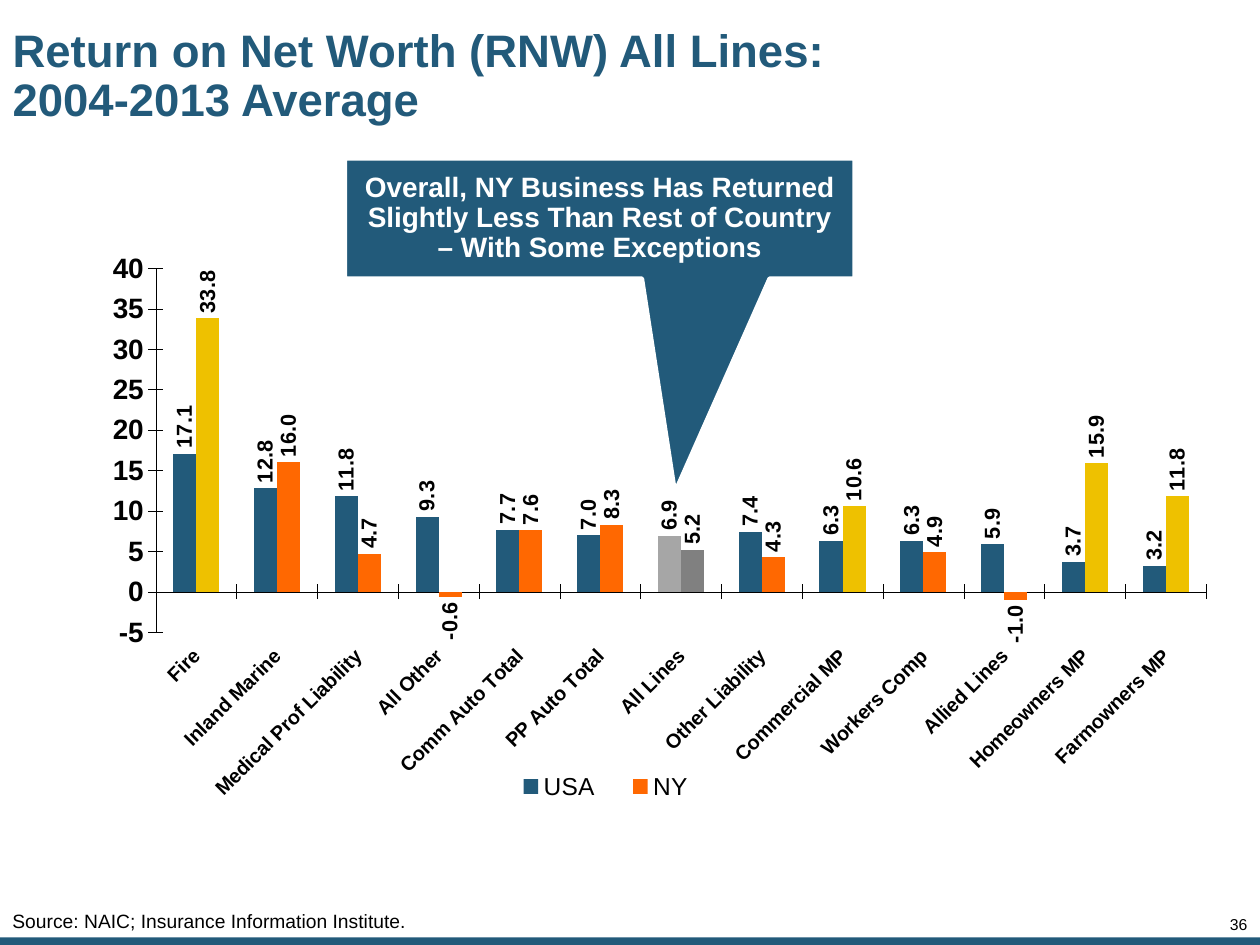
from lxml import etree
from pptx import Presentation
from pptx.chart import data as chart_data
from pptx.dml.color import RGBColor
from pptx.enum import chart as charts, shapes, text
from pptx.oxml import ns
from pptx.util import Pt

NAVY, ORANGE, GOLD, BLACK, WHITE = "225A7A", "FF6801", "EEC100", "000000", "FFFFFF"
RETURNS = [
    ("Fire", 17.1, 33.8),
    ("Inland Marine", 12.8, 16.0),
    ("Medical Prof Liability", 11.8, 4.7),
    ("All Other", 9.3, -0.6),
    ("Comm Auto Total", 7.7, 7.6),
    ("PP Auto Total", 7.0, 8.3),
    ("All Lines", 6.9, 5.2),
    ("Other Liability", 7.4, 4.3),
    ("Commercial MP", 6.3, 10.6),
    ("Workers Comp", 6.3, 4.9),
    ("Allied Lines", 5.9, -1.0),
    ("Homeowners MP", 3.7, 15.9),
    ("Farmowners MP", 3.2, 11.8),
]
SERIES_STYLES = [
    (NAVY, "0.0", {"All Lines": "A6A6A6"}),
    (ORANGE, "#,##0.0", {"All Lines": "808080", "Fire": GOLD, "Commercial MP": GOLD,
                         "Homeowners MP": GOLD, "Farmowners MP": GOLD}),
]


def color(value):
    """Turn a hex string into a colour."""
    return RGBColor.from_string(value)


def paint(fill, value):
    """Give a fill one solid colour."""
    fill.solid()
    fill.fore_color.rgb = color(value)


def set_layout(parent, index, inner, **fractions):
    """Place a chart part by fractions of the chart area."""
    for old in parent.findall(ns.qn("c:layout")):
        parent.remove(old)
    layout = etree.Element(ns.qn("c:layout"))
    manual = etree.SubElement(layout, ns.qn("c:manualLayout"))
    settings = {"layoutTarget": "inner"} if inner else {}
    settings.update(xMode="edge", yMode="edge", **fractions)
    for name, value in settings.items():
        etree.SubElement(manual, ns.qn("c:" + name)).set("val", str(value))
    parent.insert(index, layout)


class Deck:
    """Hold the style and the current slide."""

    font_name = "Arial"

    def __init__(self):
        """Start a presentation with one title-only slide."""
        self.presentation = Presentation()
        self.presentation.slide_width, self.presentation.slide_height = Pt(720), Pt(540)
        self.slide = self.presentation.slides.add_slide(self.presentation.slide_layouts[5])

    def style(self, font, size, value=BLACK, bold=False):
        """Format a font."""
        font.name, font.size, font.bold = self.font_name, Pt(size), bold
        font.color.rgb = color(value)

    def fill_text(self, shape, lines, size, value=BLACK, bold=False, align=text.PP_ALIGN.LEFT,
                  anchor=text.MSO_ANCHOR.TOP, spacing=1.0, insets=(7.2, 3.6)):
        """Put lines into one paragraph of a shape."""
        frame = shape.text_frame
        frame.word_wrap, frame.auto_size = True, text.MSO_AUTO_SIZE.NONE
        frame.vertical_anchor = anchor
        frame.margin_left = frame.margin_right = Pt(insets[0])
        frame.margin_top = frame.margin_bottom = Pt(insets[1])
        paragraph = frame.paragraphs[0]
        paragraph.alignment, paragraph.line_spacing = align, spacing
        for number, line in enumerate(lines):
            if number:
                paragraph.add_line_break()
            run = paragraph.add_run()
            run.text = line
            self.style(run.font, size, value, bold)

    def title(self, box, lines):
        """Move and fill the title placeholder."""
        shape = self.slide.shapes.title
        shape.left, shape.top, shape.width, shape.height = map(Pt, box)
        self.fill_text(shape, lines, 26, NAVY, True, anchor=text.MSO_ANCHOR.BOTTOM, spacing=0.9)

    def text_box(self, box, line, size, **options):
        """Add a line of plain text."""
        self.fill_text(self.slide.shapes.add_textbox(*map(Pt, box)), [line], size, **options)

    def shape(self, kind, box, line=None):
        """Add a navy preset shape."""
        shape = self.slide.shapes.add_shape(kind, *map(Pt, box))
        shape.shadow.inherit = False
        paint(shape.fill, NAVY)
        if line:
            paint(shape.line.fill, line)
            shape.line.width = Pt(2.25)
        else:
            shape.line.fill.background()
        return shape

    def callout(self, box, pointer, line):
        """Add a callout with its pointer tip."""
        shape = self.shape(shapes.MSO_SHAPE.RECTANGULAR_CALLOUT, box, WHITE)
        shape.adjustments[0], shape.adjustments[1] = pointer
        self.fill_text(shape, [line], 16, WHITE, True, text.PP_ALIGN.CENTER,
                       text.MSO_ANCHOR.MIDDLE, 0.9, (7.2, 7.2))

    def axis(self, axis, size):
        """Format an axis."""
        axis.has_major_gridlines = False
        axis.major_tick_mark = charts.XL_TICK_MARK.CROSS
        axis.minor_tick_mark = charts.XL_TICK_MARK.NONE
        self.style(axis.tick_labels.font, size, bold=True)
        paint(axis.format.line.fill, BLACK)
        axis.format.line.width = Pt(0.25)

    def column_chart(self, box):
        """Add the chart of returns by line."""
        names, usa, new_york = zip(*RETURNS)
        values = chart_data.CategoryChartData()
        values.categories = names
        values.add_series("USA", usa)
        values.add_series("NY", new_york)
        chart = self.slide.shapes.add_chart(
            charts.XL_CHART_TYPE.COLUMN_CLUSTERED, *map(Pt, box), values).chart
        self.style(chart.font, 10.4)
        chart.has_title = False
        self.axis(chart.category_axis, 11.4)
        chart.category_axis.tick_label_position = charts.XL_TICK_LABEL_POSITION.LOW
        self.axis(chart.value_axis, 16)
        chart.value_axis.minimum_scale, chart.value_axis.maximum_scale = -5, 40
        chart.value_axis.major_unit = 5
        chart.value_axis.tick_labels.number_format = "General"
        chart.value_axis.tick_labels.number_format_is_linked = False
        plot = chart.plots[0]
        plot.gap_width, plot.overlap, plot.vary_by_categories = 150, 0, False
        for series, (fill, number_format, highlights) in zip(plot.series, SERIES_STYLES):
            series.invert_if_negative = False
            paint(series.format.fill, fill)
            for name, highlight in highlights.items():
                paint(series.points[names.index(name)].format.fill, highlight)
            labels = series.data_labels
            labels.show_value = True
            labels.number_format, labels.number_format_is_linked = number_format, False
            labels.position = charts.XL_LABEL_POSITION.OUTSIDE_END
            self.style(labels.font, 12.4, bold=True)
        for parent, degrees in (("c:dLbls", -90), ("c:catAx", -45)):
            for body in chart.element.xpath(f".//{parent}/c:txPr/a:bodyPr"):
                body.set("rot", str(degrees * 60000))
                body.set("vert", "horz")
        chart.has_legend = True
        chart.legend.position = charts.XL_LEGEND_POSITION.RIGHT
        chart.legend.include_in_layout = False
        self.style(chart.legend.font, 14)
        set_layout(chart.element.xpath(".//c:plotArea")[0], 0, True,
                   x=0.119, y=0.077, w=0.843, h=0.571)
        set_layout(chart.element.xpath(".//c:legend")[0], 1, False,
                   x=0.39, y=0.86, w=0.18, h=0.06)


def main():
    """Build the slide and save it."""
    deck = Deck()
    deck.shape(shapes.MSO_SHAPE.RECTANGLE, (0, 535.7, 720, 4.3))
    deck.text_box((677.5, 524.2, 35.3, 9.4), "36", 9, align=text.PP_ALIGN.RIGHT,
                  spacing=0.85, insets=(0, 0))
    deck.title((0, 7.9, 684, 67.7), ["Return on Net Worth (RNW) All Lines:", "2004-2013 Average"])
    deck.column_chart((4.3, 125.3, 712.1, 364.3))
    deck.text_box((0, 502.6, 689, 33.8), "Source: NAIC; Insurance Information Institute.", 11,
                  anchor=text.MSO_ANCHOR.BOTTOM)
    deck.callout((197.3, 90.7, 290.9, 68.4), (0.148, 2.28),
                 "Overall, NY Business Has Returned Slightly Less Than Rest of Country "
                 "– With Some Exceptions")
    deck.presentation.save("out.pptx")


if __name__ == "__main__":
    main()
